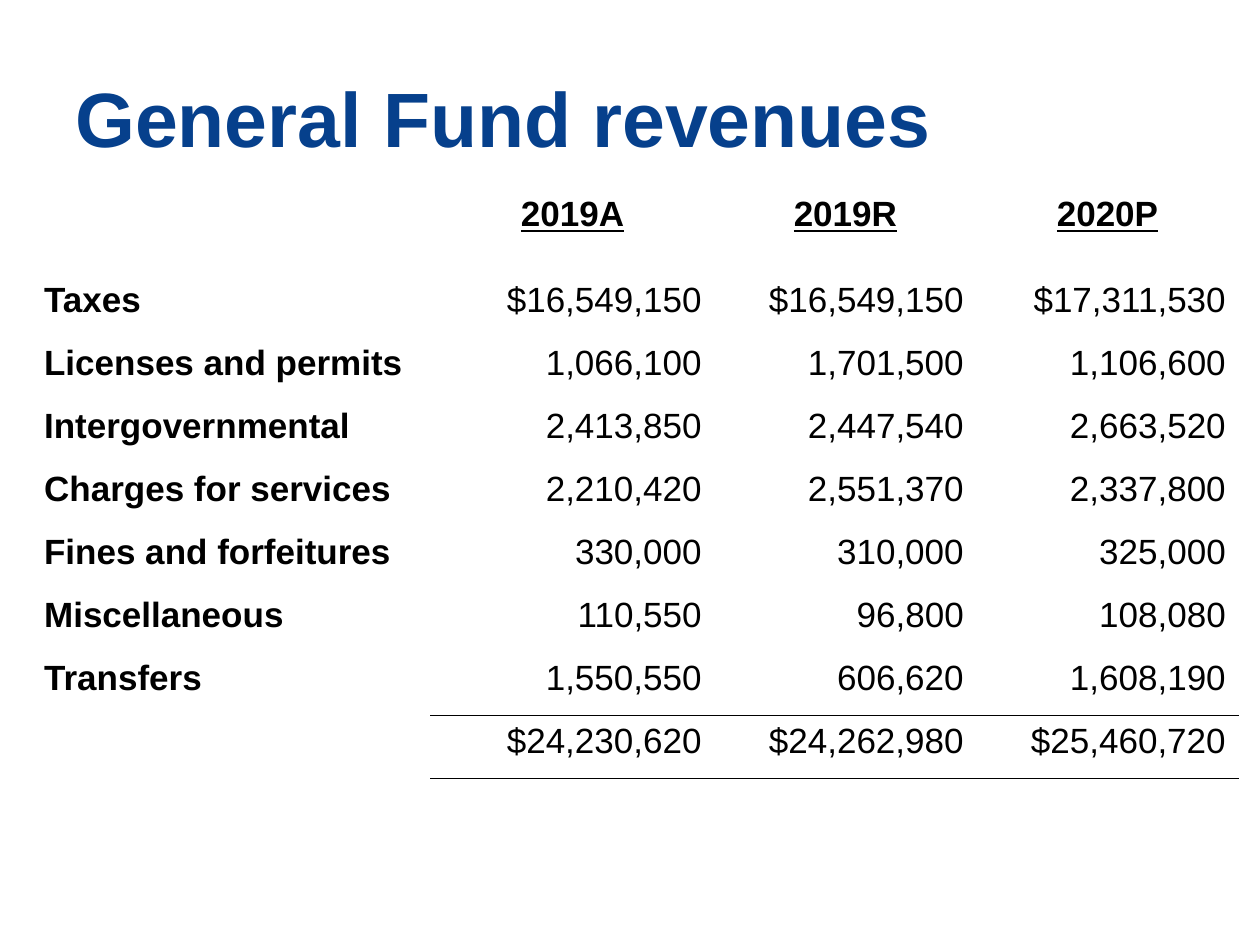
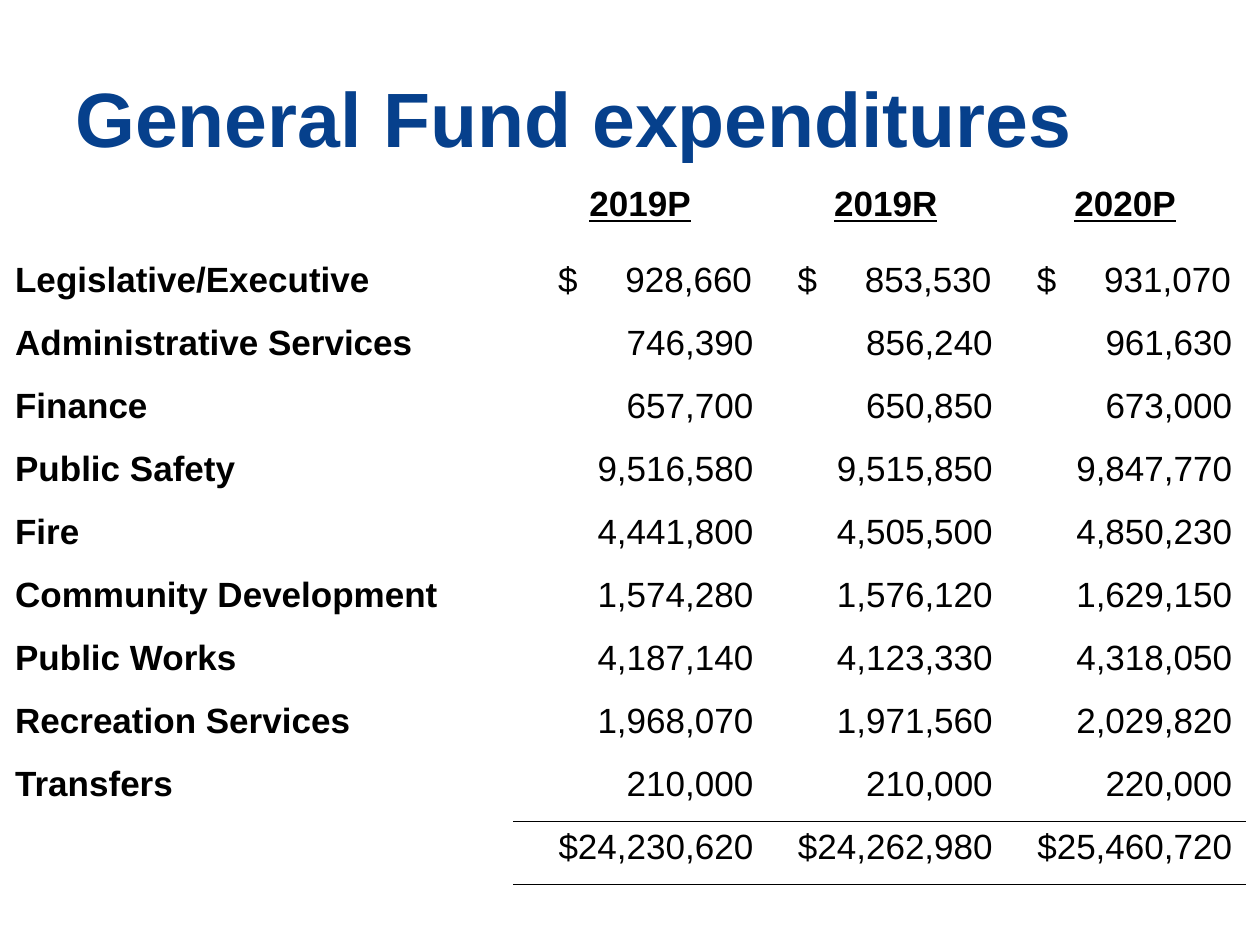
from lxml import etree
from pptx import Presentation
from pptx import util as u
from pptx.dml.color import RGBColor
from pptx.enum import text
from pptx.oxml import ns

BLUE, BLACK, WHITE = "06408C", "000000", "FFFFFF"
ROW_HEIGHT = 0.5
MARGIN = 0.1
AMOUNT_WIDTH = 1.55


def color(value):
    return RGBColor.from_string(value)


class Deck:
    font = "Arial"

    def __init__(self):
        self.prs = Presentation()
        self.prs.slide_width, self.prs.slide_height = u.Inches(10), u.Inches(7.5)
        self.s = None

    def add_slide(self):
        self.s = self.prs.slides.add_slide(self.prs.slide_layouts[6])

    def style(self, p, size, value, bold=False, underline=False):
        for r in p.runs:
            r.font.name = self.font
            r.font.size = u.Pt(size)
            r.font.color.rgb = color(value)
            r.font.bold = bold
            r.font.underline = underline

    def title(self, words):
        sp = self.s.shapes.add_textbox(u.Inches(0.5), u.Inches(0.3), u.Inches(9), u.Inches(1.25))
        tf = sp.text_frame
        tf.word_wrap = True
        tf.vertical_anchor = text.MSO_ANCHOR.MIDDLE
        tf.text = words
        self.style(tf.paragraphs[0], 44, BLUE, bold=True)

    def border(self, cell, sides):
        tc_pr = cell._tc.get_or_add_tcPr()
        for i, side in enumerate(sides):
            ln = etree.Element(ns.qn(f"a:ln{side}"), w=str(u.Pt(1)))
            fill = etree.SubElement(ln, ns.qn("a:solidFill"))
            etree.SubElement(fill, ns.qn("a:srgbClr"), val=BLACK)
            tc_pr.insert(i, ln)

    def split_amount(self, cell, p, width):
        cell.margin_left = u.Inches(width - MARGIN - AMOUNT_WIDTH)
        p.alignment = text.PP_ALIGN.LEFT
        tabs = etree.SubElement(p._p.get_or_add_pPr(), ns.qn("a:tabLst"))
        etree.SubElement(tabs, ns.qn("a:tab"), pos=str(u.Inches(AMOUNT_WIDTH - 0.01)), algn="r")

    def cell(self, cell, words, align, width, bold=False, underline=False):
        cell.fill.solid()
        cell.fill.fore_color.rgb = color(WHITE)
        p = cell.text_frame.paragraphs[0]
        p.text = words
        p.alignment = align
        if "\t" in words:
            self.split_amount(cell, p, width)
        self.style(p, 20, BLACK, bold, underline)

    def budget_table(self, left, top, widths, header_height, years, lines, totals):
        rows = [("", *years), *lines, ("", *totals)]
        last = len(rows) - 1
        height = header_height + ROW_HEIGHT * last
        table = self.s.shapes.add_table(
            len(rows), len(widths), u.Inches(left), u.Inches(top),
            u.Inches(sum(widths)), u.Inches(height)).table
        table.first_row = table.horz_banding = False
        for column, width in zip(table.columns, widths):
            column.width = u.Inches(width)
        for i, row in enumerate(rows):
            table.rows[i].height = u.Inches(ROW_HEIGHT if i else header_height)
            for j, words in enumerate(row):
                cell = table.cell(i, j)
                if j == 0:
                    align = text.PP_ALIGN.LEFT
                else:
                    align = text.PP_ALIGN.RIGHT if i else text.PP_ALIGN.CENTER
                self.cell(cell, words, align, widths[j], bold=i == 0 or j == 0, underline=i == 0)
                if j and i >= last - 1:
                    self.border(cell, "TB" if i == last else "B")


REVENUES = [
    ("Taxes", "$16,549,150", "$16,549,150", "$17,311,530"),
    ("Licenses and permits", "1,066,100", "1,701,500", "1,106,600"),
    ("Intergovernmental", "2,413,850", "2,447,540", "2,663,520"),
    ("Charges for services", "2,210,420", "2,551,370", "2,337,800"),
    ("Fines and forfeitures", "330,000", "310,000", "325,000"),
    ("Miscellaneous", "110,550", "96,800", "108,080"),
    ("Transfers", "1,550,550", "606,620", "1,608,190"),
]
EXPENDITURES = [
    ("Legislative/Executive", "$\t928,660", "$\t853,530", "$\t931,070"),
    ("Administrative Services", "746,390", "856,240", "961,630"),
    ("Finance", "657,700", "650,850", "673,000"),
    ("Public Safety", "9,516,580", "9,515,850", "9,847,770"),
    ("Fire", "4,441,800", "4,505,500", "4,850,230"),
    ("Community Development", "1,574,280", "1,576,120", "1,629,150"),
    ("Public Works", "4,187,140", "4,123,330", "4,318,050"),
    ("Recreation Services", "1,968,070", "1,971,560", "2,029,820"),
    ("Transfers", "210,000", "210,000", "220,000"),
]
TOTALS = ("$24,230,620", "$24,262,980", "$25,460,720")


def main():
    deck = Deck()

    deck.add_slide()
    deck.title("General Fund revenues")
    deck.budget_table(0.25, 1.5, (3.17, 2.25, 2.08, 2.08), 0.68,
                      ("2019A", "2019R", "2020P"), REVENUES, TOTALS)

    deck.add_slide()
    deck.title("General Fund expenditures")
    deck.budget_table(0.02, 1.42, (4.06, 2, 1.9, 1.9), 0.6,
                      ("2019P", "2019R", "2020P"), EXPENDITURES, TOTALS)

    deck.prs.save("out.pptx")


if __name__ == "__main__":
    main()
